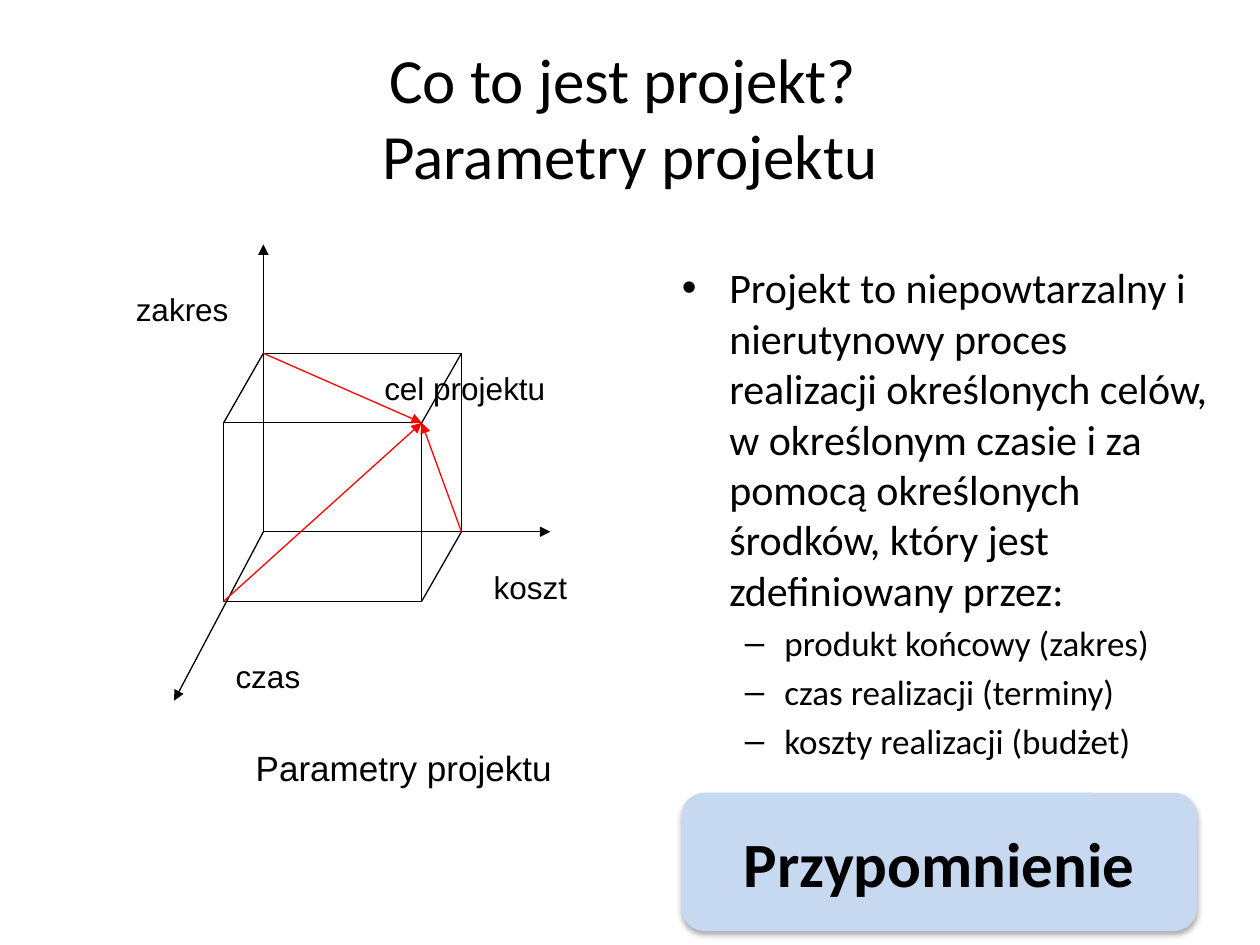
from lxml.etree import SubElement
from pptx import Presentation
from pptx.dml.color import RGBColor
from pptx.enum.shapes import MSO_CONNECTOR, MSO_SHAPE
from pptx.enum.text import MSO_ANCHOR, MSO_AUTO_SIZE, PP_ALIGN
from pptx.oxml.ns import qn
from pptx.util import Pt

BLACK, RED, BLUE = "000000", "FF0000", "C6D9F1"


def color(code):
    return RGBColor.from_string(code)


def add_run(para, text, size, face="Calibri", bold=False):
    run = para.add_run()
    run.text = text
    run.font.size = Pt(size)
    run.font.name = face
    run.font.bold = bold
    run.font.color.rgb = color(BLACK)


def place(shape, x, y, w, h):
    shape.left, shape.top, shape.width, shape.height = Pt(x), Pt(y), Pt(w), Pt(h)


def add_line(slide, start, end, code=BLACK, arrow=False):
    line = slide.shapes.add_connector(
        MSO_CONNECTOR.STRAIGHT, *[Pt(v) for v in (*start, *end)])
    line.line.color.rgb = color(code)
    line.line.width = Pt(0.75)
    if arrow:
        SubElement(line.line._get_or_add_ln(), qn("a:tailEnd"), type="triangle")
    SubElement(line._element.spPr, qn("a:effectLst"))


def add_face(slide, x, y, w, h):
    face = slide.shapes.add_shape(MSO_SHAPE.RECTANGLE, Pt(x), Pt(y), Pt(w), Pt(h))
    face.shadow.inherit = False
    face.fill.background()
    face.line.color.rgb = color(BLACK)
    face.line.width = Pt(0.75)


def add_label(slide, x, y, w, text, size=18):
    box = slide.shapes.add_textbox(Pt(x), Pt(y), Pt(w), Pt(size * 1.2 + 7.2))
    box.text_frame.word_wrap = True
    para = box.text_frame.paragraphs[0]
    para.space_before = Pt(size / 2)
    add_run(para, text, size, "Arial")


def add_title(slide, x, y, w, h):
    title = slide.shapes.title
    place(title, x, y, w, h)
    frame = title.text_frame
    frame.auto_size = MSO_AUTO_SIZE.NONE
    frame.vertical_anchor = MSO_ANCHOR.MIDDLE
    para = frame.paragraphs[0]
    para.alignment = PP_ALIGN.CENTER
    add_run(para, "Co to jest projekt? ", 36)
    para.add_line_break()
    add_run(para, "Parametry projektu", 36)


def add_list(slide, x, y, w, h):
    body = slide.placeholders[1]
    place(body, x, y, w, h)
    frame = body.text_frame
    frame.auto_size = MSO_AUTO_SIZE.NONE
    items = [
        (0, "Projekt to niepowtarzalny i nierutynowy proces realizacji "
            "określonych celów, w określonym czasie i za pomocą określonych "
            "środków, który jest zdefiniowany przez:"),
        (1, "produkt końcowy (zakres)"),
        (1, "czas realizacji (terminy)"),
        (1, "koszty realizacji (budżet)"),
    ]
    # Size, left margin, hanging indent and bullet of each level
    styles = [(24, 27, 27, "•"), (20, 58.5, 22.5, "–")]
    for i, (level, text) in enumerate(items):
        size, left, hang, mark = styles[level]
        para = frame.add_paragraph() if i else frame.paragraphs[0]
        para.level = level
        para.space_before = Pt(size * 0.2)
        props = para._p.get_or_add_pPr()
        props.set("marL", str(Pt(left)))
        props.set("indent", str(-Pt(hang)))
        SubElement(props, qn("a:buChar"), char=mark)
        add_run(para, text, size)


def add_cube(slide, x, y, w, h):
    # Axes from the back lower left corner
    zero = (x + 80, y + 164.2)
    tips = [(zero[0], y), (zero[0] + 164, zero[1]), (zero[0] - 51, zero[1] + 96.5)]
    for tip in tips:
        add_line(slide, zero, tip, arrow=True)

    # Back and front faces, joined by slanted edges
    wide, high, dx, dy = 113.2, 102, -22.7, 39.7
    left, low = zero
    right, top = left + wide, low - high
    add_face(slide, left, top, wide, high)
    add_face(slide, left + dx, top + dy, wide, high)
    for px, py in [(left, top), (right, top), (right, low)]:
        add_line(slide, (px + dx, py + dy), (px, py))

    # Arrows to the goal
    goal = (right + dx, top + dy)
    for start in [(left + dx, low + dy), (left, top), (right, low)]:
        add_line(slide, start, goal, RED, arrow=True)

    # Labels
    add_label(slide, x + 204.5, y + 181.5, 79, "koszt")
    add_label(slide, x, y + 22.3, 68, "zakres")
    add_label(slide, x + 57, y + 232.5, 57, "czas")
    add_label(slide, x + 142, y + 67.5, 119, "cel projektu")
    add_label(slide, x + 68.5, y + h - 31, 215, "Parametry projektu", 20)


def add_badge(slide, x, y, w, h):
    badge = slide.shapes.add_shape(
        MSO_SHAPE.ROUNDED_RECTANGLE, Pt(x), Pt(y), Pt(w), Pt(h))
    badge.fill.solid()
    badge.fill.fore_color.rgb = color(BLUE)
    badge.line.fill.background()
    # Soft shadow below
    badge.shadow.inherit = False
    effects = badge._element.spPr.find(qn("a:effectLst"))
    shade = SubElement(effects, qn("a:outerShdw"), blurRad=str(Pt(3.5)),
                       dist=str(Pt(2.2)), dir="5400000", rotWithShape="0")
    tint = SubElement(shade, qn("a:srgbClr"), val=BLACK)
    SubElement(tint, qn("a:alpha"), val="32000")
    badge.text_frame.vertical_anchor = MSO_ANCHOR.MIDDLE
    para = badge.text_frame.paragraphs[0]
    para.alignment = PP_ALIGN.CENTER
    add_run(para, "Przypomnienie", 36, bold=True)


def main():
    deck = Presentation()
    deck.slide_width, deck.slide_height = Pt(720), Pt(540)
    slide = deck.slides.add_slide(deck.slide_layouts[1])
    add_title(slide, 36, 21.6, 648, 90)
    add_list(slide, 382.5, 146, 318, 356.5)
    add_cube(slide, 70.5, 139.7, 283.5, 314.6)
    add_badge(slide, 389.5, 453, 294.5, 79)
    deck.save("out.pptx")


if __name__ == "__main__":
    main()
